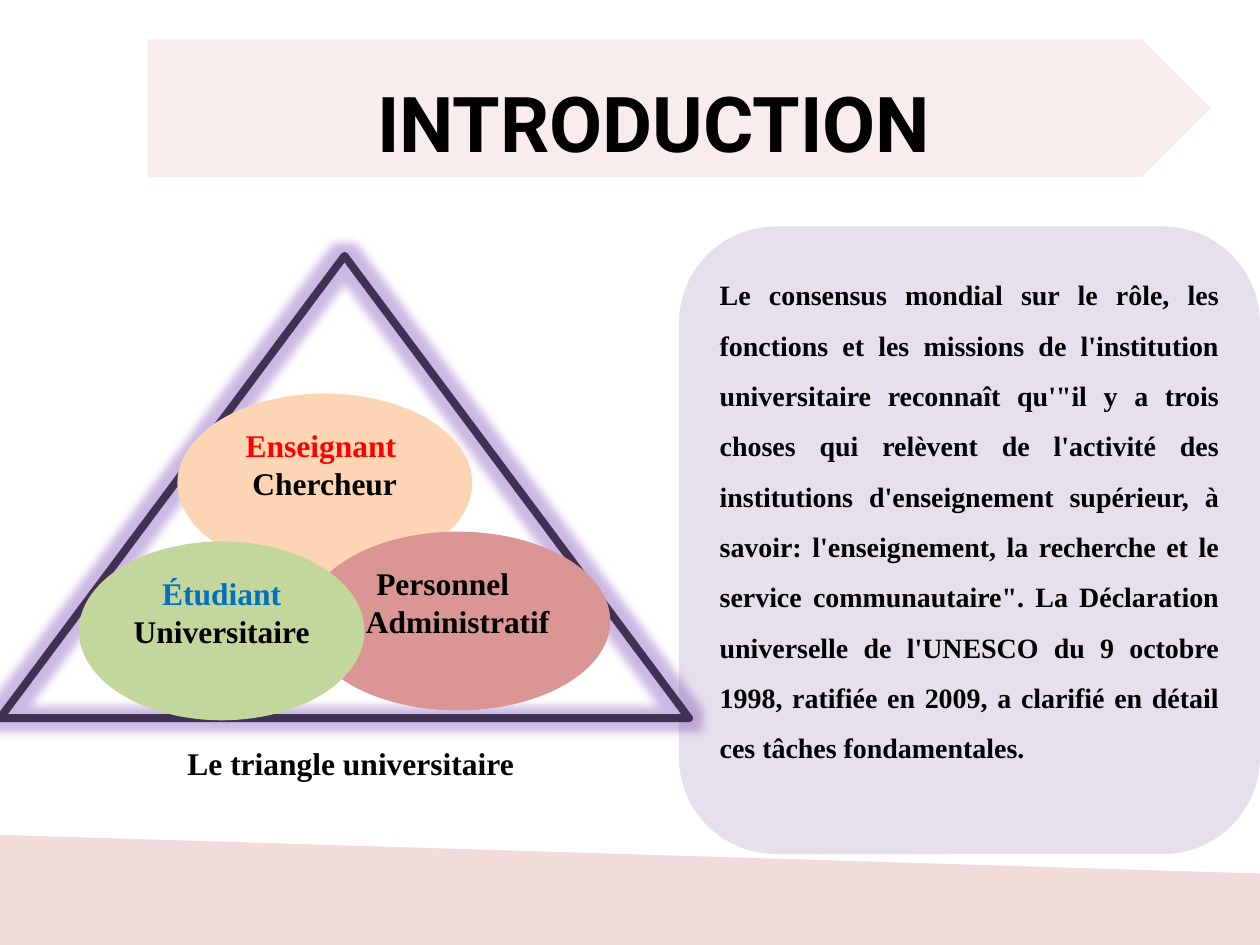
import pptx
import pptx.util
import pptx.dml.color
import pptx.enum.shapes
import pptx.enum.text
import pptx.oxml
import pptx.oxml.ns
from dataclasses import dataclass
from typing import Optional

Pt = pptx.util.Pt
MSO = pptx.enum.shapes.MSO_SHAPE
ALIGN = pptx.enum.text.PP_ALIGN


@dataclass(frozen=True)
class Theme:
    banner: str = "F8EDEC"
    ground: str = "F2DCDB"
    panel: str = "E6E0EC"
    edge: str = "403152"
    glow: str = "8064A2"
    peach: str = "FCD5B5"
    rose: str = "D99694"
    green: str = "C3D69B"
    ink: str = "000000"
    red: str = "FF0000"
    blue: str = "0070C0"
    serif: str = "Times New Roman"
    sans: str = "Roboto"
    title: int = 44
    label: int = 18
    body: int = 16


T = Theme()


@dataclass(frozen=True)
class Box:
    x: float
    y: float
    w: float
    h: float

    def lengths(self) -> list:
        return [Pt(v) for v in (self.x, self.y, self.w, self.h)]


@dataclass(frozen=True)
class Run:
    text: str
    color: str = T.ink


@dataclass(frozen=True)
class Para:
    runs: tuple[Run, ...]
    right_margin: float = 0


@dataclass(frozen=True)
class Member:
    box: Box
    fill: str
    paras: tuple[Para, ...]


MEMBERS = (
    Member(Box(101.4, 224.9, 168.5, 102.2), T.peach,
           (Para((Run("Enseignant ", T.red),)), Para((Run("Chercheur"),)))),
    Member(Box(174.4, 303.8, 174.4, 102.2), T.rose,
           (Para((Run("Personnel"),), 17), Para((Run("Administratif"),)))),
    Member(Box(45.1, 309.4, 163.2, 102.2), T.green,
           (Para((Run("Étudiant ", T.blue), Run("Universitaire"))),)),
)

CONSENSUS = (
    "Le consensus mondial sur le rôle, les fonctions et les missions de "
    "l'institution universitaire reconnaît qu'\"il y a trois choses qui "
    "relèvent de l'activité des institutions d'enseignement supérieur, à "
    "savoir: l'enseignement, la recherche et le service communautaire\". La "
    "Déclaration universelle de l'UNESCO du 9 octobre 1998, ratifiée en 2009, "
    "a clarifié en détail ces tâches fondamentales. "
)


def rgb(color: str) -> pptx.dml.color.RGBColor:
    return pptx.dml.color.RGBColor.from_string(color)


def style(sp, fill: Optional[str], line: Optional[str] = None, width: float = 0) -> None:
    sp.shadow.inherit = False
    if fill:
        sp.fill.solid()
        sp.fill.fore_color.rgb = rgb(fill)
    else:
        sp.fill.background()
    if line:
        sp.line.color.rgb = rgb(line)
        sp.line.width = Pt(width)
    else:
        sp.line.fill.background()


def add_shape(s, kind, box: Box, fill: Optional[str], line: Optional[str] = None,
              width: float = 0):
    sp = s.shapes.add_shape(kind, *box.lengths())
    style(sp, fill, line, width)
    return sp


def write(sp, paras: tuple[Para, ...], size: int, font: str = T.serif,
          align=ALIGN.CENTER, spacing: float = 1.0) -> None:
    tf = sp.text_frame
    tf.word_wrap = True
    tf.vertical_anchor = pptx.enum.text.MSO_ANCHOR.TOP
    for i, para in enumerate(paras):
        p = tf.add_paragraph() if i else tf.paragraphs[0]
        p.alignment = align
        p.line_spacing = spacing
        p.font.size = Pt(size)
        p.font.name = font
        p.font.bold = True
        pPr = p._p.get_or_add_pPr()
        pPr.set("marL", "0")
        pPr.set("marR", str(Pt(para.right_margin)))
        pPr.set("indent", "0")
        for run in para.runs:
            r = p.add_run()
            r.text = run.text
            r.font.color.rgb = rgb(run.color)


def add_label(s, box: Box, text: str, size: int, font: str = T.serif) -> None:
    write(s.shapes.add_textbox(*box.lengths()), (Para((Run(text),)),), size, font)


def add_ground(s) -> None:
    fb = s.shapes.build_freeform(Pt(0), Pt(478.1))
    corners = ((725.8, 500.4), (721.4, 535), (720, 540), (0, 540))
    fb.add_line_segments([(Pt(x), Pt(y)) for x, y in corners], close=True)
    style(fb.convert_to_shape(), T.ground, T.ground, 2)


def add_triangle(s, box: Box) -> None:
    sp = add_shape(s, MSO.ISOSCELES_TRIANGLE, box, None, T.edge, 4.5)
    ns = pptx.oxml.ns.nsdecls("a")
    sp.line._get_or_add_ln().append(pptx.oxml.parse_xml(f"<a:round {ns}/>"))
    effects = sp._element.spPr.find(pptx.oxml.ns.qn("a:effectLst"))
    effects.append(pptx.oxml.parse_xml(
        f'<a:glow {ns} rad="{Pt(11)}"><a:srgbClr val="{T.glow}">'
        '<a:satMod val="175000"/><a:alpha val="40000"/></a:srgbClr></a:glow>'))


def add_member(s, member: Member) -> None:
    sp = add_shape(s, MSO.OVAL, member.box, member.fill)
    sp.text_frame.margin_left = sp.text_frame.margin_right = Pt(0)
    write(sp, member.paras, T.label)


def main() -> None:
    prs = pptx.Presentation()
    prs.slide_width, prs.slide_height = Pt(720), Pt(540)
    s = prs.slides.add_slide(prs.slide_layouts[6])
    add_ground(s)
    add_shape(s, MSO.PENTAGON, Box(84.2, 22.5, 607.7, 78.7), T.banner)
    add_label(s, Box(50.4, 39.6, 646.6, 60.5), "INTRODUCTION", T.title, T.sans)
    panel = add_shape(s, MSO.ROUNDED_RECTANGLE, Box(388, 129.4, 332, 358.6), T.panel)
    write(panel, (Para((Run(CONSENSUS),)),), T.body, align=ALIGN.JUSTIFY, spacing=1.5)
    add_triangle(s, Box(0, 146.2, 393.8, 264.2))
    for member in MEMBERS:
        add_member(s, member)
    add_label(s, Box(-22.3, 421.9, 450, 28.8), "Le triangle universitaire ", T.label)
    prs.save("out.pptx")


if __name__ == "__main__":
    main()
